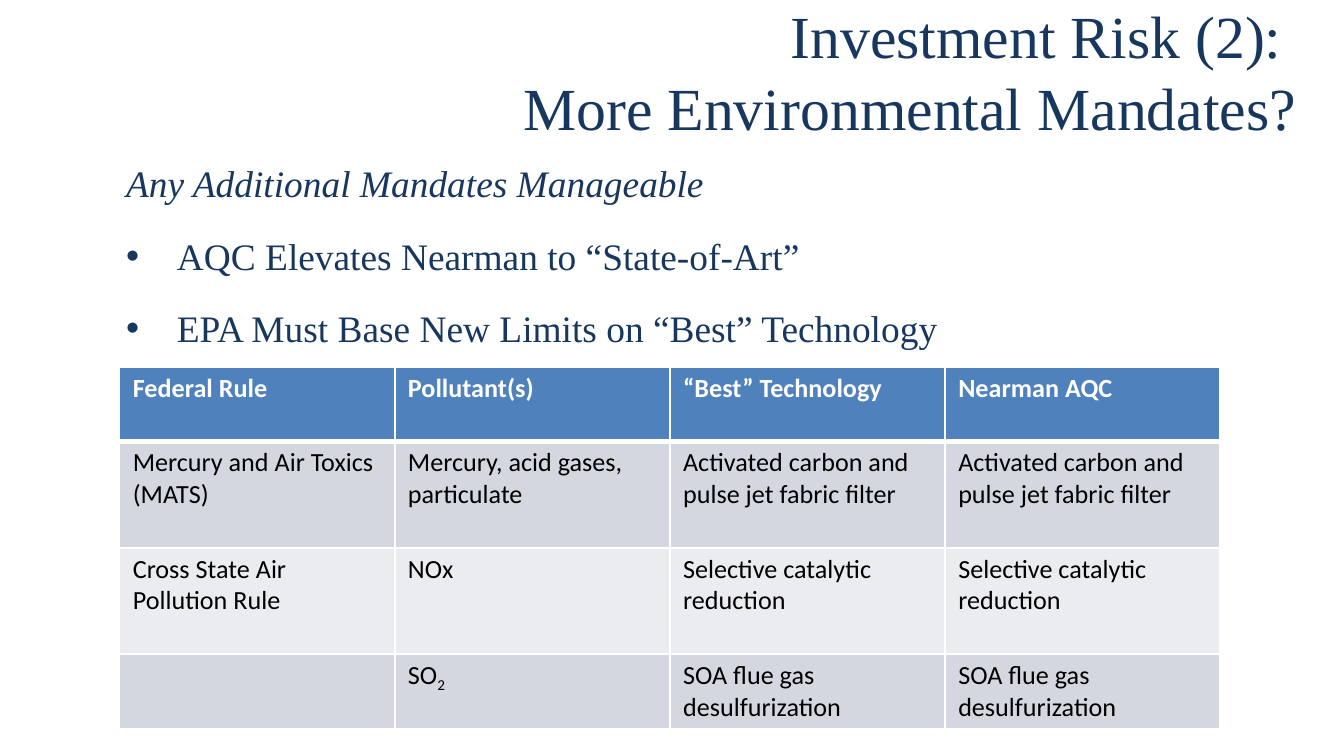
from lxml import etree
from pptx import Presentation
from pptx.dml.color import RGBColor
from pptx.enum.text import MSO_ANCHOR, MSO_AUTO_SIZE, PP_ALIGN
from pptx.oxml.ns import qn
from pptx.util import Cm, Pt

RIGHT = PP_ALIGN.RIGHT
MIDDLE, TOP = MSO_ANCHOR.MIDDLE, MSO_ANCHOR.TOP
NO_AUTOFIT = MSO_AUTO_SIZE.NONE

SERIF, SANS = "Times New Roman", "Calibri"
NAVY, BLUE, WHITE, BLACK = "17375E", "4F81BD", "FFFFFF", "000000"
BANDS = ["D5D7E0", "EBECF0"]

TITLE = "Investment Risk (2): \nMore Environmental Mandates?"
BODY = [
    {"text": "Any Additional Mandates Manageable", "bullet": None, "line": 35.4, "italic": True},
    {"text": "AQC Elevates Nearman to “State-of-Art”", "bullet": "•", "line": 35.4, "italic": False},
    {"text": "EPA Must Base New Limits on “Best” Technology", "bullet": "•", "line": 34.4, "italic": False},
]
TABLE = [
    ["Federal Rule", "Pollutant(s)", "“Best” Technology", "Nearman AQC"],
    ["Mercury and Air Toxics (MATS)", "Mercury, acid gases, particulate",
     "Activated carbon and pulse jet fabric filter", "Activated carbon and pulse jet fabric filter"],
    ["Cross State Air Pollution Rule", "NOx",
     "Selective catalytic reduction", "Selective catalytic reduction"],
    ["", ("SO", "2"), "SOA flue gas desulfurization", "SOA flue gas desulfurization"],
]
COLUMN_WIDTH = 5.2
ROW_HEIGHTS = [1.4, 2.01, 2.01, 1.4]


def color(hex_string):
    return RGBColor.from_string(hex_string)


def add_text(paragraph, text, *, font, size, fill, bold=False, italic=False, baseline=0):
    for index, line in enumerate(text.split("\n")):
        if index:
            paragraph.add_line_break()
        run = paragraph.add_run()
        run.text = line
        run.font.name, run.font.size = font, Pt(size)
        run.font.bold, run.font.italic = bold, italic
        run.font.color.rgb = color(fill)
        if baseline:
            run.font._element.set("baseline", str(baseline * 1000))


def place(shape, left, top, width, height, anchor):
    shape.left, shape.top, shape.width, shape.height = Cm(left), Cm(top), Cm(width), Cm(height)
    frame = shape.text_frame
    frame.auto_size, frame.word_wrap, frame.vertical_anchor = NO_AUTOFIT, True, anchor
    return frame


def set_bullet(paragraph, character):
    properties = paragraph._p.get_or_add_pPr()
    properties.set("marL", str(Cm(0.96)))
    properties.set("indent", str(-Cm(0.96)))
    if character:
        etree.SubElement(properties, qn("a:buFont"), typeface="Arial")
        etree.SubElement(properties, qn("a:buChar"), char=character)
    else:
        etree.SubElement(properties, qn("a:buNone"))


def set_borders(cell, top, bottom):
    properties = cell._tc.get_or_add_tcPr()
    for side, width in (("lnL", 1), ("lnR", 1), ("lnT", top), ("lnB", bottom)):
        line = etree.SubElement(properties, qn(f"a:{side}"), w=str(Pt(width)))
        fill = etree.SubElement(line, qn("a:solidFill"))
        etree.SubElement(fill, qn("a:srgbClr"), val=WHITE)


def add_title(slide):
    frame = place(slide.shapes.title, -2.97, 0.38, 27.74, 1.91, MIDDLE)
    paragraph = frame.paragraphs[0]
    paragraph.alignment = RIGHT
    add_text(paragraph, TITLE, font=SERIF, size=32, fill=NAVY)


def add_body(slide):
    frame = place(slide.placeholders[1], 2.13, 2.49, 22, 6.58, TOP)
    for index, item in enumerate(BODY):
        paragraph = frame.add_paragraph() if index else frame.paragraphs[0]
        paragraph.line_spacing = Pt(item["line"])
        paragraph.space_before = Pt(4 if index else 0)
        set_bullet(paragraph, item["bullet"])
        add_text(paragraph, item["text"], font=SERIF, size=20, fill=NAVY, italic=item["italic"])


def add_rules_table(slide):
    columns = len(TABLE[0])
    table = slide.shapes.add_table(len(TABLE), columns, Cm(2.26), Cm(6.95),
                                   Cm(COLUMN_WIDTH * columns), Cm(sum(ROW_HEIGHTS))).table
    for column in table.columns:
        column.width = Cm(COLUMN_WIDTH)
    for row, texts in enumerate(TABLE):
        table.rows[row].height = Cm(ROW_HEIGHTS[row])
        header = row == 0
        for column, content in enumerate(texts):
            cell = table.cell(row, column)
            cell.margin_left = cell.margin_right = Cm(0.25)
            cell.margin_top = cell.margin_bottom = Cm(0.1)
            set_borders(cell, top=3 if row == 1 else 1, bottom=3 if header else 1)
            cell.fill.solid()
            cell.fill.fore_color.rgb = color(BLUE if header else BANDS[(row - 1) % 2])
            parts = content if isinstance(content, tuple) else (content,)
            for part, baseline in zip(parts, (0, -25)):
                add_text(cell.text_frame.paragraphs[0], part, font=SANS, size=14,
                         fill=WHITE if header else BLACK, bold=header, baseline=baseline)


def main():
    """Build the slide on environmental mandates and save it."""
    presentation = Presentation()
    presentation.slide_width, presentation.slide_height = Cm(25.4), Cm(14.29)
    slide = presentation.slides.add_slide(presentation.slide_layouts[1])
    add_title(slide)
    add_body(slide)
    add_rules_table(slide)
    presentation.save("out.pptx")


if __name__ == "__main__":
    main()
